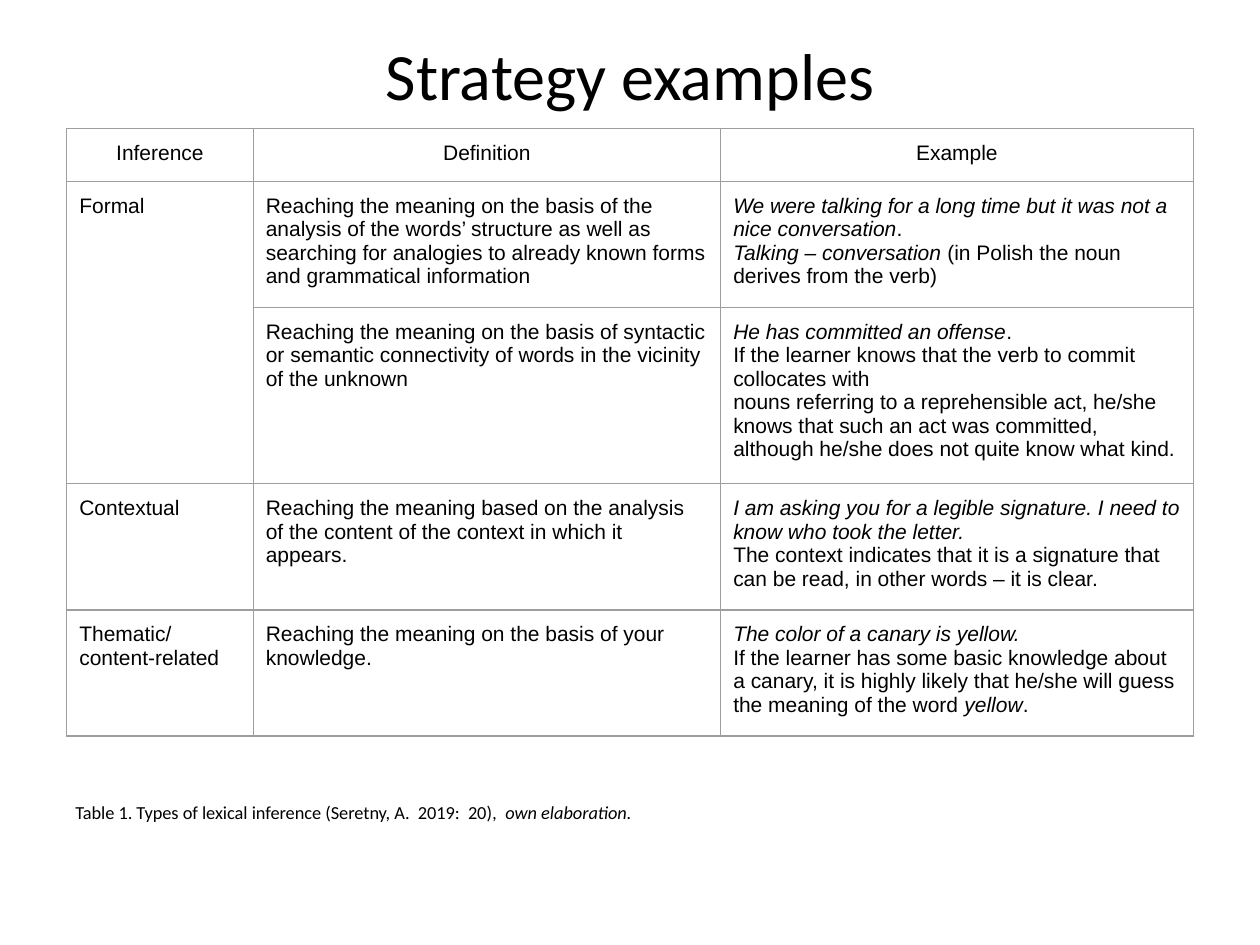
from dataclasses import dataclass

from lxml.etree import SubElement
from pptx import Presentation
from pptx.dml.color import RGBColor
from pptx.enum.text import MSO_ANCHOR as Anchor, PP_ALIGN as Align
from pptx.oxml.ns import qn
from pptx.util import Inches, Pt


@dataclass(frozen=True)
class Theme:
    ink: str = "000000"
    rule: str = "9E9E9E"
    rule_width: float = 0.75
    heading_font: str = "Calibri"
    table_font: str = "Arial"
    title_size: float = 37.8
    table_size: float = 12
    caption_size: float = 10.5


THEME = Theme()

COLUMN_WIDTHS = (1.48, 3.71, 3.75)
ROW_HEIGHTS = (0.42, 0.94, 1.33, 0.94, 0.94)

# A cell is a list of paragraphs; a paragraph is a list of runs;
# runs between asterisks are italic.
HEADERS = ("Inference", "Definition", "Example")
STRATEGIES = (
    (
        "Formal",
        "Reaching the meaning on the basis of the analysis of the words’ structure as well as "
        "searching for analogies to already known forms and grammatical information",
        "*We were talking for a long time but it was not a nice conversation*.\n"
        "*Talking – conversation* (in Polish the noun derives from the verb)",
    ),
    (
        "",
        "Reaching the meaning on the basis of syntactic or semantic connectivity of words "
        "in the vicinity of the unknown",
        "*He has committed an offense*.\n"
        "If the learner knows that the verb to commit collocates with\n"
        "nouns referring to a reprehensible act, he/she\n"
        "knows that such an act was committed, although he/she does not quite know what kind.",
    ),
    (
        "Contextual",
        "Reaching the meaning based on the analysis of the content of the context "
        "in which it appears.",
        "*I am asking you for a legible signature. I need to know who took the letter.*\n"
        "The context indicates that it is a signature that can be read, "
        "in other words – it is clear.",
    ),
    (
        "Thematic/content-related",
        "Reaching the meaning on the basis of your knowledge.",
        "*The color of a canary is yellow.*\n"
        "If the learner has some basic knowledge about a canary, it is highly likely that "
        "he/she will guess the meaning of the word *yellow*.",
    ),
)
CAPTION = "Table 1. Types of lexical inference (Seretny, A.  2019:  20)*,  own elaboration.*"


def write(frame, text, font_name, size, align):
    """Fill a frame: one paragraph a line, italics between asterisks."""
    for index, line in enumerate(text.split("\n")):
        paragraph = frame.add_paragraph() if index else frame.paragraphs[0]
        paragraph.alignment = align
        paragraph.font.name = font_name
        paragraph.font.size = Pt(size)
        paragraph.font.color.rgb = RGBColor.from_string(THEME.ink)
        for part, words in enumerate(line.split("*")):
            if words:
                run = paragraph.add_run()
                run.text = words
                if part % 2:
                    run.font.italic = True


def add_text(slide, text, left, top, width, height, size, align):
    frame = slide.shapes.add_textbox(
        Inches(left), Inches(top), Inches(width), Inches(height)
    ).text_frame
    frame.word_wrap = True
    frame.vertical_anchor = Anchor.MIDDLE
    frame.margin_top = frame.margin_bottom = 0
    write(frame, text, THEME.heading_font, size, align)


def outline_cell(cell):
    properties = cell._tc.get_or_add_tcPr()
    for position, side in enumerate(("a:lnL", "a:lnR", "a:lnT", "a:lnB")):
        line = properties.makeelement(qn(side), {"w": str(Pt(THEME.rule_width))})
        fill = SubElement(line, qn("a:solidFill"))
        SubElement(fill, qn("a:srgbClr"), val=THEME.rule)
        properties.insert(position, line)


def fill_cell(cell, text, align):
    cell.margin_left = cell.margin_right = Inches(0.1)
    cell.margin_top = cell.margin_bottom = Inches(0.1)
    cell.fill.background()
    outline_cell(cell)
    write(cell.text_frame, text, THEME.table_font, THEME.table_size, align)


def add_strategy_table(slide, left, top):
    table = slide.shapes.add_table(
        len(ROW_HEIGHTS), len(COLUMN_WIDTHS), Inches(left), Inches(top),
        Inches(sum(COLUMN_WIDTHS)), Inches(sum(ROW_HEIGHTS)),
    ).table
    table.first_row = table.horz_banding = False
    for column, width in zip(table.columns, COLUMN_WIDTHS):
        column.width = Inches(width)
    for row, height in zip(table.rows, ROW_HEIGHTS):
        row.height = Inches(height)
    for r, texts in enumerate((HEADERS, *STRATEGIES)):
        for c, text in enumerate(texts):
            fill_cell(table.cell(r, c), text, Align.LEFT if r else Align.CENTER)
    table.cell(1, 0).merge(table.cell(2, 0))


def main():
    deck = Presentation()
    deck.slide_width, deck.slide_height = Inches(10), Inches(7.5)
    slide = deck.slides.add_slide(deck.slide_layouts[6])
    add_text(slide, "Strategy examples", 0.5, 0.27, 9, 0.64, THEME.title_size, Align.CENTER)
    add_text(slide, CAPTION, 0.5, 6.3, 9, 0.3, THEME.caption_size, Align.LEFT)
    add_strategy_table(slide, 0.53, 1.02)
    deck.save("out.pptx")


if __name__ == "__main__":
    main()
